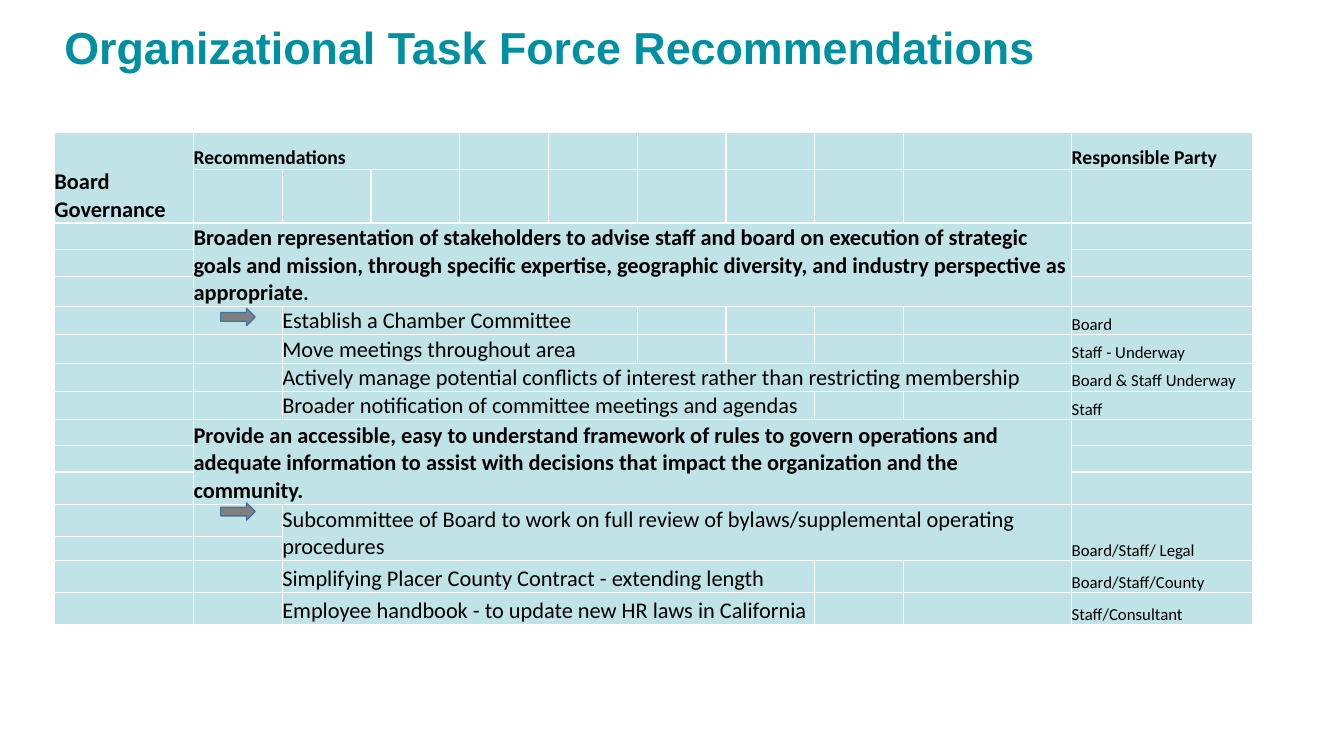
from lxml.etree import SubElement
from pptx import Presentation
from pptx.dml.color import RGBColor
from pptx.enum.shapes import MSO_SHAPE as Shape
from pptx.enum.text import MSO_ANCHOR as Anchor
from pptx.oxml.ns import qn
from pptx.util import Inches, Pt

TEAL = RGBColor(0x00, 0x90, 0xA1)
BLACK = RGBColor(0x00, 0x00, 0x00)
WHITE = RGBColor(0xFF, 0xFF, 0xFF)
GREY = RGBColor(0x80, 0x80, 0x80)
BLUE = RGBColor(0x43, 0x73, 0x9E)

HEADLINE = "Organizational Task Force Recommendations"
COLUMNS = [1.38] + [0.88] * 8 + [1.67, 1.79]
ROWS = [0.37, 0.47, 0.26, 0.27, 0.3, 0.28, 0.28, 0.28, 0.28,
        0.26, 0.26, 0.32, 0.32, 0.24, 0.32, 0.32]
TABLE_LEFT, TABLE_TOP = 0.54, 1.31
ARROW_TOPS = [3.06, 4.99]

STYLES = {
    "section": {"size": Pt(16), "bold": True},
    "heading": {"size": Pt(14), "bold": True},
    "action": {"size": Pt(16), "bold": False},
    "party": {"size": Pt(12), "bold": False},
}

# row, column, rows spanned, columns spanned, runs
GOALS = [
    (0, 0, 2, 1, [("Board Governance", "section")]),
    (0, 1, 1, 3, [("Recommendations", "heading")]),
    (0, 10, 1, 1, [("Responsible Party", "heading")]),
    (2, 1, 3, 9, [("Broaden representation of stakeholders to advise staff and board on "
                   "execution of strategic goals and mission, through specific expertise, "
                   "geographic diversity, and industry perspective as appropriate", "section"),
                  (".", "heading")]),
    (9, 1, 3, 9, [("Provide an accessible, easy to understand framework of rules to govern "
                   "operations and adequate information to assist with decisions that impact "
                   "the organization and the community.", "section")]),
]
# row, rows spanned, columns spanned, action, responsible party
ACTIONS = [
    (5, 1, 4, "Establish a Chamber Committee", "Board"),
    (6, 1, 4, "Move meetings throughout area", "Staff - Underway"),
    (7, 1, 8, "Actively manage potential conflicts of interest rather than "
              "restricting membership", "Board & Staff Underway"),
    (8, 1, 6, "Broader notification of committee meetings and agendas", "Staff"),
    (12, 2, 8, "Subcommittee of Board to work on full review of bylaws/supplemental "
               "operating procedures", "Board/Staff/ Legal"),
    (14, 1, 6, "Simplifying Placer County Contract - extending length", "Board/Staff/County"),
    (15, 1, 6, "Employee handbook - to update new HR laws in California", "Staff/Consultant"),
]


def add_run(paragraph, text, color, **formats):
    run = paragraph.add_run()
    run.text = text
    for name, value in formats.items():
        setattr(run.font, name, value)
    run.font.color.rgb = color


def style_cell(cell):
    for side in ("left", "right", "top", "bottom"):
        setattr(cell, f"margin_{side}", 0)
    cell.vertical_anchor = Anchor.BOTTOM
    properties = cell._tc.get_or_add_tcPr()
    for edge in ("lnL", "lnR", "lnT", "lnB"):
        line = SubElement(properties, qn(f"a:{edge}"), w=str(Pt(1)))
        SubElement(SubElement(line, qn("a:solidFill")), qn("a:srgbClr"), val=str(WHITE))
    cell.fill.solid()
    cell.fill.fore_color.rgb = TEAL
    tint = properties.find(qn("a:solidFill")).find(qn("a:srgbClr"))
    SubElement(tint, qn("a:alpha"), val="25000")
    SubElement(cell.text_frame.paragraphs[0]._p, qn("a:endParaRPr"), sz="800")


def fill_cell(table, row, column, height, width, runs):
    cell = table.cell(row, column)
    if height * width > 1:
        cell.merge(table.cell(row + height - 1, column + width - 1))
    for text, style in runs:
        add_run(cell.text_frame.paragraphs[0], text, BLACK, name="Calibri", **STYLES[style])


def add_headline(slide):
    box = slide.shapes.add_textbox(Inches(0.54), Inches(0.23), Inches(11.5), Inches(0.54))
    frame = box.text_frame
    frame.word_wrap = True
    frame.vertical_anchor = Anchor.MIDDLE
    paragraph = frame.paragraphs[0]
    paragraph.line_spacing = 0.9
    add_run(paragraph, HEADLINE, TEAL, name="Arial", size=Pt(32), bold=True)


def add_recommendations(slide):
    table = slide.shapes.add_table(
        len(ROWS), len(COLUMNS), Inches(TABLE_LEFT), Inches(TABLE_TOP),
        Inches(sum(COLUMNS)), Inches(sum(ROWS))).table
    table.first_row = table.horz_banding = False
    for column, width in zip(table.columns, COLUMNS):
        column.width = Inches(width)
    for row, height in zip(table.rows, ROWS):
        row.height = Inches(height)
    for cell in table.iter_cells():
        style_cell(cell)
    for goal in GOALS:
        fill_cell(table, *goal)
    for row, height, width, action, party in ACTIONS:
        fill_cell(table, row, 2, height, width, [(action, "action")])
        fill_cell(table, row, 10, height, 1, [(party, "party")])


def add_arrow(slide, top):
    arrow = slide.shapes.add_shape(
        Shape.RIGHT_ARROW, Inches(2.19), Inches(top), Inches(0.34), Inches(0.17))
    arrow.shadow.inherit = False
    arrow.fill.solid()
    arrow.fill.fore_color.rgb = GREY
    arrow.line.color.rgb = BLUE
    arrow.line.width = Pt(1)


def main():
    deck = Presentation()
    deck.slide_width, deck.slide_height = Inches(13.33), Inches(7.5)
    slide = deck.slides.add_slide(deck.slide_layouts[6])
    add_headline(slide)
    add_recommendations(slide)
    for top in ARROW_TOPS:
        add_arrow(slide, top)
    deck.save("out.pptx")


if __name__ == "__main__":
    main()
